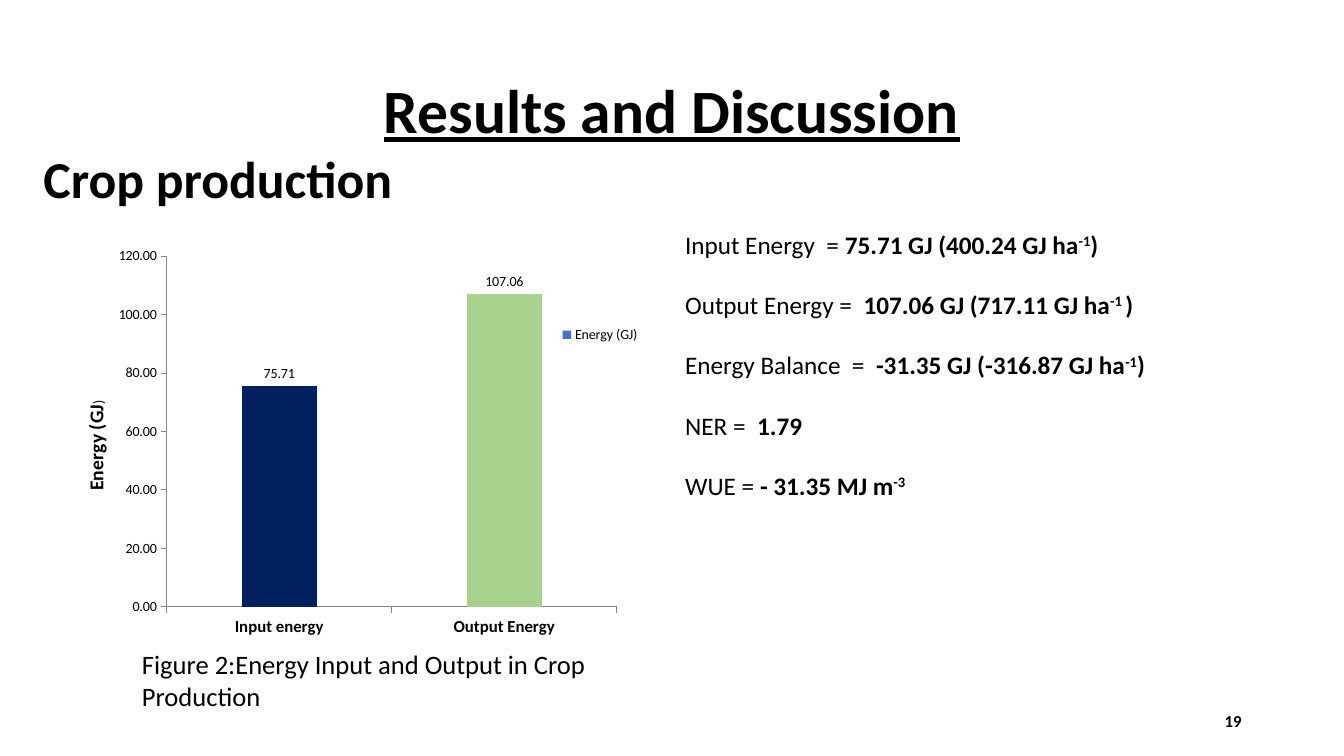
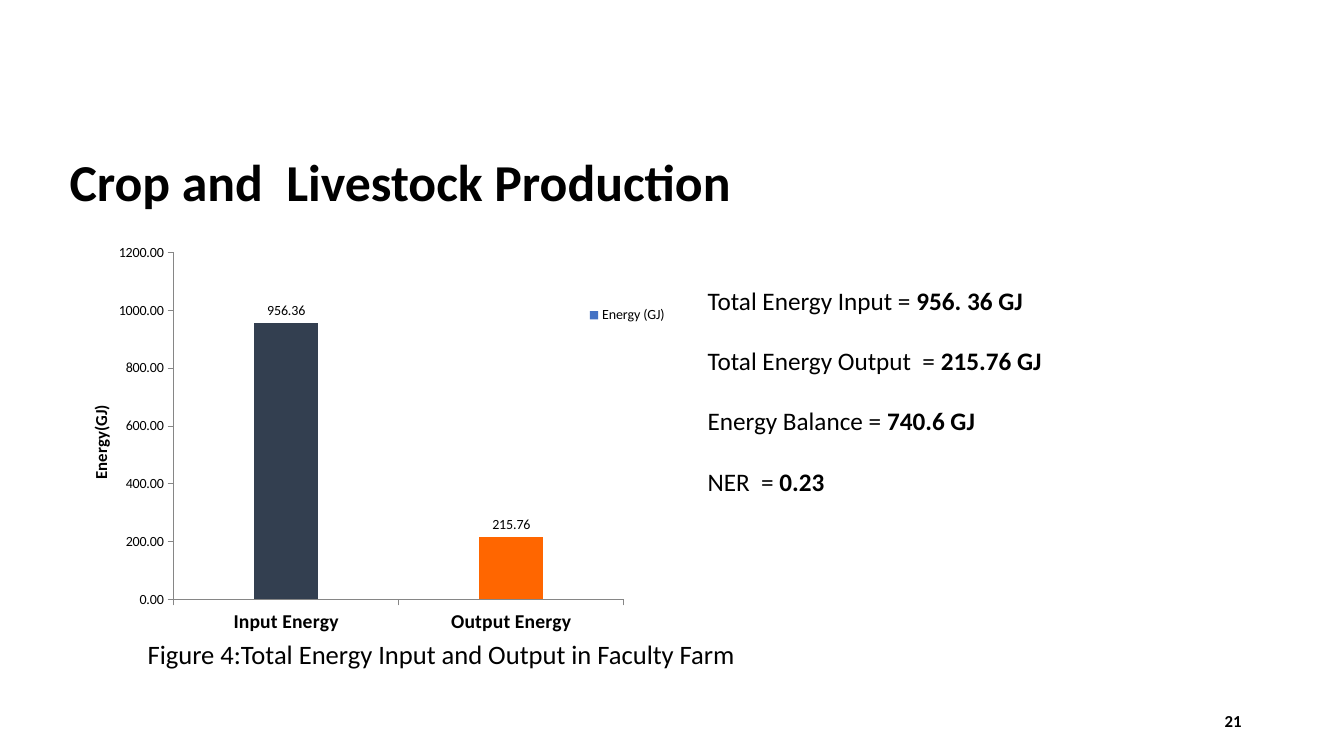
from lxml import etree
from pptx import Presentation
from pptx.chart.data import CategoryChartData
from pptx.dml.color import RGBColor
from pptx.enum.chart import XL_CHART_TYPE, XL_LABEL_POSITION, XL_LEGEND_POSITION, XL_TICK_MARK
from pptx.enum.text import MSO_ANCHOR, MSO_AUTO_SIZE, PP_ALIGN
from pptx.oxml.ns import qn
from pptx.util import Pt

COLUMNS = XL_CHART_TYPE.COLUMN_CLUSTERED
OUTSIDE_END = XL_LABEL_POSITION.OUTSIDE_END
LEGEND_RIGHT = XL_LEGEND_POSITION.RIGHT
TICK_OUT, TICK_NONE = XL_TICK_MARK.OUTSIDE, XL_TICK_MARK.NONE
TOP, MIDDLE = MSO_ANCHOR.TOP, MSO_ANCHOR.MIDDLE
LEFT, CENTER, RIGHT = PP_ALIGN.LEFT, PP_ALIGN.CENTER, PP_ALIGN.RIGHT

FONT = "Calibri"
BLACK, AXIS_GREY, SERIES_BLUE = "000000", "868686", "4472C4"
NARROW, WIDE = (7.2, 3.6), (9.4, 5)  # text insets: sides, top and bottom


def color(value):
    return RGBColor.from_string(value)


def set_layout(parent, index, **fractions):
    """Place a chart part by fractions of the chart's size."""
    old = parent.find(qn("c:layout"))
    if old is not None:
        parent.remove(old)
    layout = etree.Element(qn("c:layout"))
    parent.insert(index, layout)
    manual = etree.SubElement(layout, qn("c:manualLayout"))
    if parent.tag == qn("c:plotArea"):
        etree.SubElement(manual, qn("c:layoutTarget")).set("val", "inner")
    for axis in "xy":
        etree.SubElement(manual, qn(f"c:{axis}Mode")).set("val", "edge")
    for name, value in fractions.items():
        etree.SubElement(manual, qn(f"c:{name}")).set("val", str(value))


class Deck:
    def __init__(self):
        self.deck = Presentation()
        self.deck.slide_width, self.deck.slide_height = Pt(960), Pt(540)
        self.page = None

    def add_page(self, number):
        self.page = self.deck.slides.add_slide(self.deck.slide_layouts[5])
        self.text_box((678, 500, 216, 29), str(number), 12, bold=True,
                      align=RIGHT, anchor=MIDDLE)

    def style(self, font, size, bold=False):
        font.name, font.size, font.bold = FONT, Pt(size), bold
        font.color.rgb = color(BLACK)

    def frame(self, shape, area, insets=NARROW, anchor=TOP):
        shape.left, shape.top, shape.width, shape.height = map(Pt, area)
        frame = shape.text_frame
        frame.word_wrap, frame.auto_size = True, MSO_AUTO_SIZE.NONE
        frame.vertical_anchor = anchor
        frame.margin_left = frame.margin_right = Pt(insets[0])
        frame.margin_top = frame.margin_bottom = Pt(insets[1])
        return frame

    def new_frame(self, area, insets=NARROW, anchor=TOP):
        box = self.page.shapes.add_textbox(*map(Pt, area))
        return self.frame(box, area, insets, anchor)

    def fill_text(self, frame, text, size, bold=False, align=LEFT):
        para = frame.paragraphs[0]
        para.text, para.alignment = text, align
        self.style(para.font, size, bold)
        return para

    def text_box(self, area, text, size, bold=False, align=LEFT, insets=NARROW, anchor=TOP):
        frame = self.new_frame(area, insets, anchor)
        return self.fill_text(frame, text, size, bold, align)

    def title(self, area, text, size, align=LEFT, anchor=TOP, underline=False):
        frame = self.frame(self.page.shapes.title, area, anchor=anchor)
        para = self.fill_text(frame, text, size, True, align)
        para.line_spacing = 0.9
        para.font.underline = underline

    def subtitle(self, area, text):
        self.text_box(area, text, 37, bold=True).line_spacing = 0.9

    def caption(self, area, text):
        self.text_box(area, text, 19, insets=WIDE)

    def results(self, area, rows):
        """Each row is a label, a bold value, a superscript and a closing text."""
        frame = self.new_frame(area, WIDE)
        for index, (label, *value) in enumerate(rows):
            para = frame.add_paragraph() if index else frame.paragraphs[0]
            if index:
                para.space_before = Pt(21.5)
            self.style(para.font, 18)
            para.add_run().text = label
            for part, text in enumerate(value):
                span = para.add_run()
                span.text, span.font.bold = text, True
                if part == 1:
                    span.font._element.set("baseline", "30000")

    def axis_title(self, axis, spans, place):
        axis_title = axis.axis_title
        frame = axis_title.text_frame
        body = frame._txBody.find(qn("a:bodyPr"))
        body.set("rot", "-5400000")
        body.set("vert", "horz")
        for text, size, bold in spans:
            span = frame.paragraphs[0].add_run()
            span.text = text
            self.style(span.font, size, bold)
        set_layout(axis_title._element, 1, x=place[0], y=place[1])

    def energy_chart(self, area, categories, values, fills, top, step, gap, overlap,
                     category_size, axis_title, title_place, plot_place, legend_place):
        data = CategoryChartData(number_format="0.00")
        data.categories = categories
        data.add_series("Energy (GJ)", values)
        chart = self.page.shapes.add_chart(COLUMNS, *map(Pt, area), data).chart
        chart.has_title = False
        self.style(chart.font, 10)

        # Columns and their labels
        plot = chart.plots[0]
        plot.vary_by_categories = False
        plot.gap_width, plot.overlap = gap, overlap
        plot.has_data_labels = True
        labels = plot.data_labels
        labels.show_value, labels.position = True, OUTSIDE_END
        labels.number_format, labels.number_format_is_linked = "0.00", False
        series = plot.series[0]
        series.format.fill.solid()
        series.format.fill.fore_color.rgb = color(SERIES_BLUE)
        for index, fill in enumerate(fills):
            point_fill = series.points[index].format.fill
            point_fill.solid()
            point_fill.fore_color.rgb = color(fill)

        # Axes
        for axis in (chart.category_axis, chart.value_axis):
            axis.has_major_gridlines = False
            axis.major_tick_mark, axis.minor_tick_mark = TICK_OUT, TICK_NONE
            axis.format.line.color.rgb = color(AXIS_GREY)
            axis.format.line.width = Pt(0.75)
        self.style(chart.category_axis.tick_labels.font, category_size, True)
        scale = chart.value_axis
        scale.minimum_scale, scale.maximum_scale, scale.major_unit = 0, top, step
        scale.tick_labels.number_format = "0.00"
        scale.tick_labels.number_format_is_linked = False
        self.axis_title(scale, axis_title, title_place)

        # Legend and placement
        chart.has_legend = True
        chart.legend.position = LEGEND_RIGHT
        chart.legend.include_in_layout = False
        for part, index, place in (
            (chart.legend._element, 1, legend_place),
            (chart._chartSpace.chart.plotArea, 0, plot_place),
        ):
            set_layout(part, index, **dict(zip("xywh", place)))


def main():
    deck = Deck()

    # Crop production
    deck.add_page(19)
    deck.title((66, 29, 828, 104), "Results and Discussion", 44, CENTER, MIDDLE, True)
    deck.subtitle((24, 106.5, 864, 54), "Crop production")
    deck.energy_chart(
        (37.5, 171.5, 480, 288), ["Input energy", "Output Energy"], [75.71, 107.06],
        ["002060", "A9D18E"], top=120, step=20, gap=200, overlap=-73, category_size=12,
        axis_title=[("Energy (GJ", 14, True), (")", 10, False)], title_place=(0.04, 0.39),
        plot_place=(0.17, 0.04, 0.67, 0.87), legend_place=(0.75, 0.21, 0.13, 0.05))
    deck.results((480, 158.5, 464, 228), [
        ("Input Energy  = ", "75.71 GJ (400.24 GJ ha", "-1", ")"),
        ("Output Energy =  ", "107.06 GJ (717.11 GJ ha", "-1 ", ")"),
        ("Energy Balance  =  ", "-31.35 GJ (-316.87 GJ ha", "-1", ")"),
        ("NER =  ", "1.79"),
        ("WUE = ", "- 31.35 MJ m", "-3"),
    ])
    deck.caption((92, 458, 373, 55), "Figure 2:Energy Input and Output in Crop Production")

    # Crop and livestock production
    deck.add_page(21)
    deck.title((42.5, 108, 828, 54), "Crop and  Livestock Production", 37)
    deck.energy_chart(
        (42.5, 169, 480, 288), ["Input Energy", "Output Energy"], [956.36, 215.76],
        ["333F50", "FF6600"], top=1200, step=200, gap=252, overlap=-3, category_size=14,
        axis_title=[("Energy(GJ)", 12, True)], title_place=(0.04, 0.41),
        plot_place=(0.17, 0.04, 0.67, 0.86), legend_place=(0.78, 0.17, 0.13, 0.05))
    deck.results((496, 198.5, 374, 163), [
        ("Total Energy Input = ", "956. 36 GJ"),
        ("Total Energy Output  = ", "215.76 GJ"),
        ("Energy Balance = ", "740.6 GJ"),
        ("NER  = ", "0.23"),
    ])
    deck.caption((96, 451, 453, 32), "Figure 4:Total Energy Input and Output in Faculty Farm")

    deck.deck.save("out.pptx")


if __name__ == "__main__":
    main()
